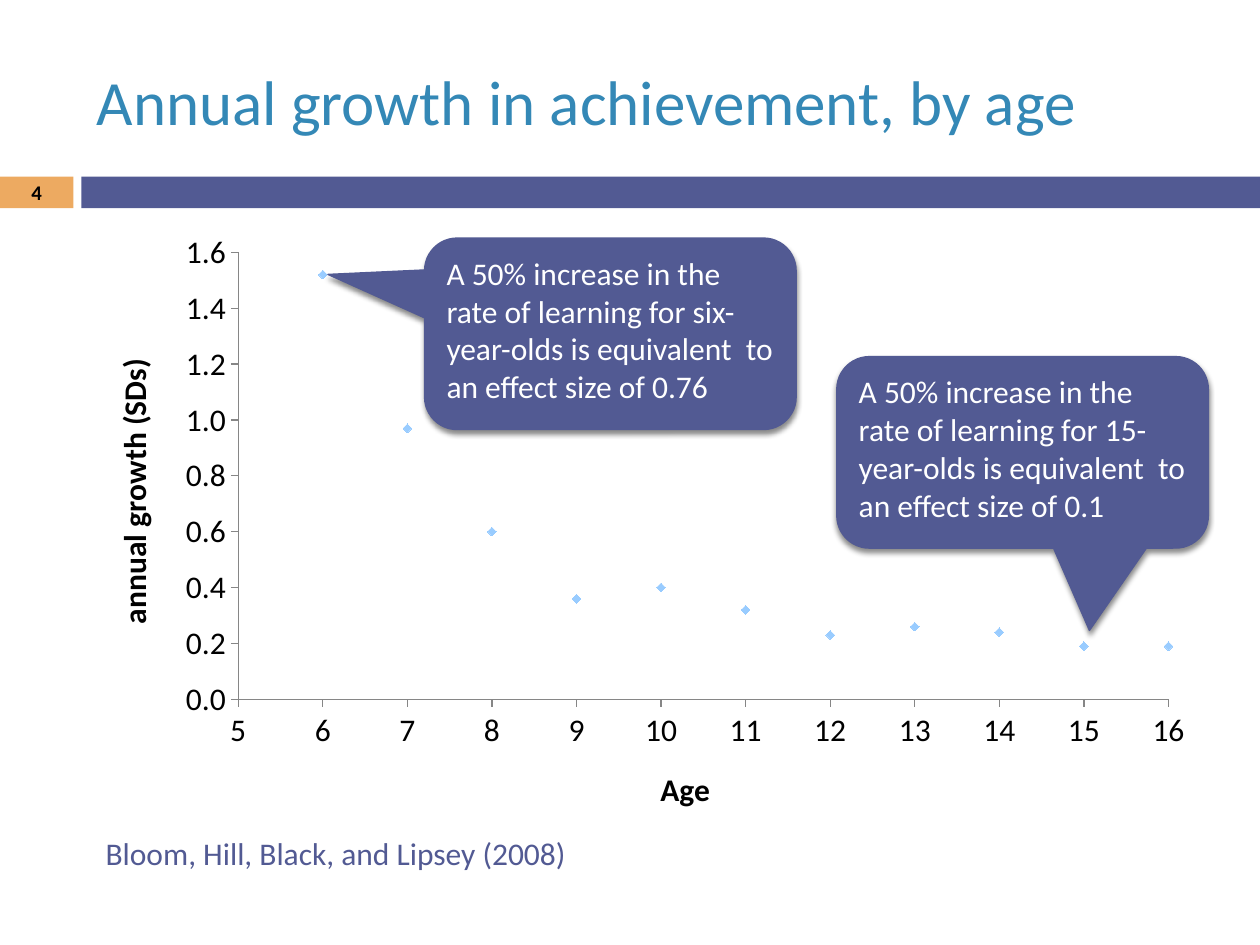
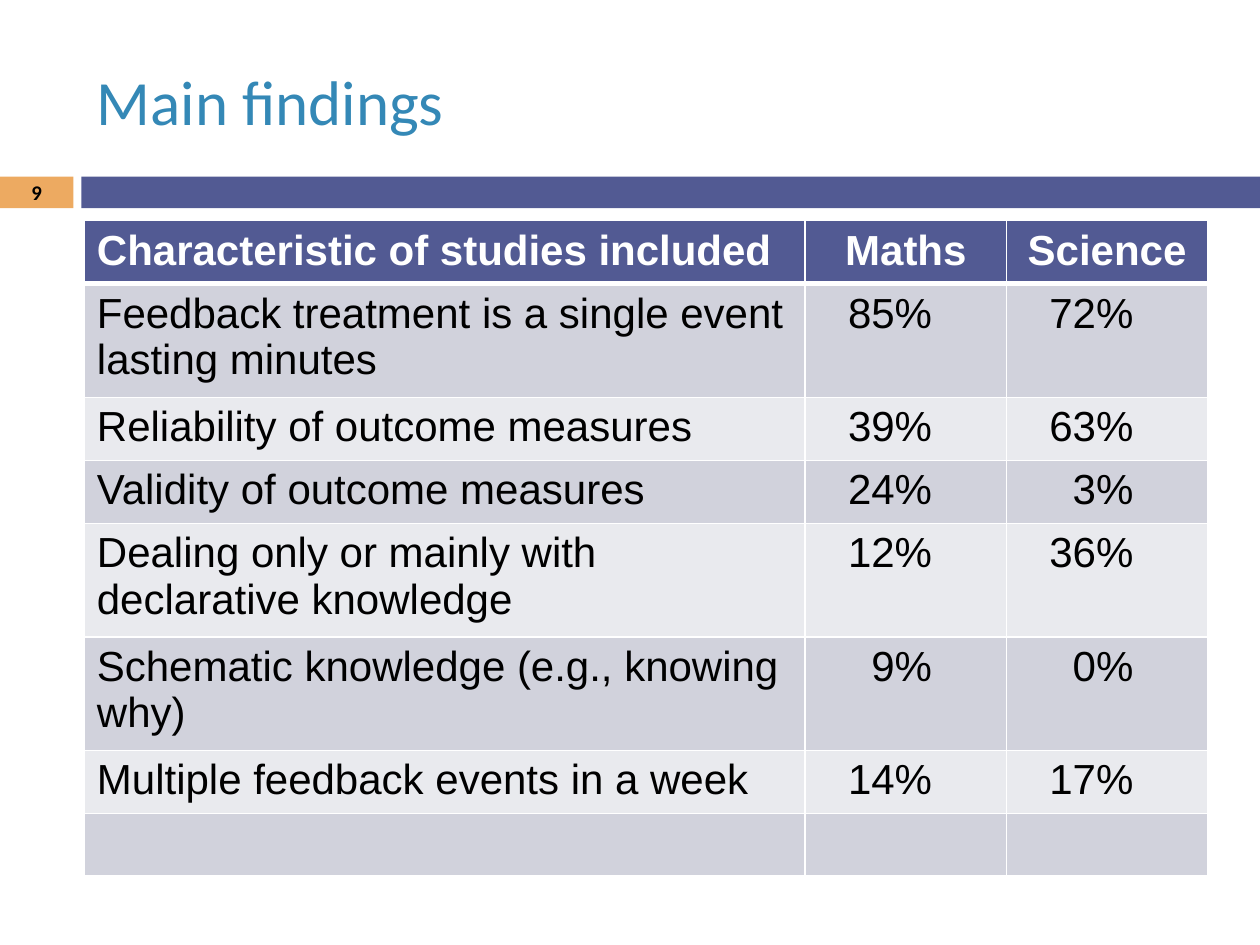
import pptx
import pptx.chart.data
import pptx.dml.color
import pptx.enum.chart
import pptx.enum.shapes
import pptx.enum.text
import pptx.oxml
import pptx.oxml.ns
import pptx.util
from pptx.util import Cm, Pt

COLORS = {"band": "525A93", "number": "EDAA61", "title": "3488B6", "text": "000000",
          "white": "FFFFFF", "odd": "D1D2DC", "even": "E9EAEE", "marker": "99CCFF", "axis": "868686"}
RGB = {name: pptx.dml.color.RGBColor.from_string(value) for name, value in COLORS.items()}
ALIGN = pptx.enum.text.PP_ALIGN
ANCHOR = pptx.enum.text.MSO_ANCHOR
SHAPE = pptx.enum.shapes.MSO_SHAPE


def write(tf, text, color, align=ALIGN.LEFT, anchor=ANCHOR.TOP, **font):
    """Put one formatted run into a text frame."""
    tf.word_wrap = True
    tf.vertical_anchor = anchor
    p = tf.paragraphs[0]
    p.alignment = align
    r = p.add_run()
    r.text = text
    for key, value in ({"name": "Calibri", "size": Pt(18), "bold": False} | font).items():
        setattr(r.font, key, value)
    r.font.color.rgb = RGB[color]


def add_filled(s, kind, box, color):
    sp = s.shapes.add_shape(kind, *map(Cm, box))
    sp.shadow.inherit = False
    sp.fill.solid()
    sp.fill.fore_color.rgb = RGB[color]
    sp.line.fill.background()
    return sp


prs = pptx.Presentation()
prs.slide_width, prs.slide_height = Cm(25.4), Cm(19.05)

# Title, band and slide number on every slide
slides = []
for title, number in [("Annual growth in achievement, by age", "4"), ("Main findings", "9")]:
    s = prs.slides.add_slide(prs.slide_layouts[6])
    add_filled(s, SHAPE.RECTANGLE, (0, 3.56, 1.48, 0.64), "number")
    add_filled(s, SHAPE.RECTANGLE, (1.64, 3.56, 23.76, 0.64), "band")
    sp = s.shapes.add_textbox(Cm(1.7), Cm(0.64), Cm(22.65), Cm(2.75))
    write(sp.text_frame, title, "title", anchor=ANCHOR.MIDDLE, size=Pt(36))
    sp = s.shapes.add_textbox(0, Cm(3.54), Cm(1.48), Cm(0.68))
    write(sp.text_frame, number, "text", ALIGN.CENTER, ANCHOR.MIDDLE, size=Pt(11.9), bold=True)
    slides.append(s)
growth_slide, findings_slide = slides

# Annual growth: source line, scatter chart and callouts
sp = growth_slide.shapes.add_textbox(Cm(1.88), Cm(16.69), Cm(17.35), Cm(1.02))
write(sp.text_frame, "Bloom, Hill, Black, and Lipsey (2008)", "band")

growth = [1.52, 0.97, 0.6, 0.36, 0.4, 0.32, 0.23, 0.26, 0.24, 0.19, 0.19]
data = pptx.chart.data.XyChartData()
points = data.add_series("Series 1")
for age, value in enumerate(growth, start=6):
    points.add_data_point(age, value)
chart = growth_slide.shapes.add_chart(pptx.enum.chart.XL_CHART_TYPE.XY_SCATTER, Cm(1.7), Cm(4.45),
                                      Cm(22.65), Cm(12.5), data).chart
chart.has_legend = chart.has_title = False
chart.font.name, chart.font.size = "Calibri", Pt(18)
chart.font.color.rgb = RGB["text"]
plot = chart.plots[0]
plot.vary_by_categories = False
series = plot.series[0]
series.format.line.fill.background()
series.marker.style = pptx.enum.chart.XL_MARKER_STYLE.DIAMOND
series.marker.size = 5
series.marker.format.fill.solid()
series.marker.format.fill.fore_color.rgb = RGB["marker"]
series.marker.format.line.fill.background()

axes = [
    (chart.category_axis, "Age", "General",
     {"minimum_scale": 5, "maximum_scale": 16, "major_unit": 1}),
    (chart.value_axis, "annual growth (SDs)", "#,##0.0",
     {"minimum_scale": 0, "maximum_scale": 1.6, "major_unit": 0.2}),
]
for axis, title, number_format, scale in axes:
    for key, value in scale.items():
        setattr(axis, key, value)
    axis.has_major_gridlines = False
    axis.major_tick_mark = pptx.enum.chart.XL_TICK_MARK.OUTSIDE
    axis.minor_tick_mark = pptx.enum.chart.XL_TICK_MARK.NONE
    axis.tick_labels.number_format = number_format
    axis.tick_labels.number_format_is_linked = False
    axis.format.line.color.rgb = RGB["axis"]
    write(axis.axis_title.text_frame, title, "text", ALIGN.CENTER, bold=True)

plot_area = chart._chartSpace.chart.plotArea
for layout in plot_area.findall(pptx.oxml.ns.qn("c:layout")):
    plot_area.remove(layout)
plot_area.insert(0, pptx.oxml.parse_xml(
    f'<c:layout {pptx.oxml.ns.nsdecls("c")}><c:manualLayout><c:layoutTarget val="inner"/>'
    '<c:xMode val="edge"/><c:yMode val="edge"/><c:x val="0.137"/><c:y val="0.051"/>'
    '<c:w val="0.828"/><c:h val="0.721"/></c:manualLayout></c:layout>'))

callouts = [
    (8.56, 4.8, (-0.76, -0.31, 0.17), "six", "0.76"),
    (16.87, 7.19, (0.18, 0.93, 0.17), "15", "0.1"),
]
for left, top, adjustments, age, effect in callouts:
    sp = add_filled(growth_slide, SHAPE.ROUNDED_RECTANGULAR_CALLOUT, (left, top, 7.49, 3.86), "band")
    for i, value in enumerate(adjustments):
        sp.adjustments[i] = value
    sp.line.color.rgb = RGB["band"]
    sp.line.width = Pt(0.79)
    sp._element.spPr.find(pptx.oxml.ns.qn("a:effectLst")).append(pptx.oxml.parse_xml(
        f'<a:outerShdw {pptx.oxml.ns.nsdecls("a")} blurRad="{Pt(3)}" dist="{Pt(2.4)}" dir="5400000" '
        f'rotWithShape="0"><a:srgbClr val="{COLORS["text"]}"><a:alpha val="45000"/></a:srgbClr></a:outerShdw>'))
    write(sp.text_frame, f"A 50% increase in the rate of learning for {age}-year-olds is equivalent"
          f"  to an effect size of {effect}", "white")

# Main findings: table with an empty last row
rows = [
    ("Characteristic of studies included", "Maths", "Science"),
    ("Feedback treatment is a single event lasting minutes", "85%", "72%"),
    ("Reliability of outcome measures", "39%", "63%"),
    ("Validity of outcome measures", "24%", "3%"),
    ("Dealing only or mainly with declarative knowledge", "12%", "36%"),
    ("Schematic knowledge (e.g., knowing why)", "9%", "0%"),
    ("Multiple feedback events in a week", "14%", "17%"),
    ("", "", ""),
]
table = findings_slide.shapes.add_table(len(rows), 3, Cm(1.7), Cm(4.45), Cm(22.65), Cm(8.23)).table
for column, width in zip(table.columns, (14.53, 4.06, 4.06)):
    column.width = Cm(width)
for i, texts in enumerate(rows):
    header = i == 0
    table.rows[i].height = Cm(1.25 if i == len(rows) - 1 else 1.04)
    for j, text in enumerate(texts):
        cell = table.cell(i, j)
        widths = {"L": 1, "R": 1, "T": 3 if i == 1 else 1, "B": 3 if header else 1}
        for side, width in widths.items():
            cell._tc.get_or_add_tcPr().append(pptx.oxml.parse_xml(
                f'<a:ln{side} {pptx.oxml.ns.nsdecls("a")} w="{Pt(width)}"><a:solidFill>'
                f'<a:srgbClr val="{COLORS["white"]}"/></a:solidFill></a:ln{side}>'))
        cell.fill.solid()
        cell.fill.fore_color.rgb = RGB["band" if header else "odd" if i % 2 else "even"]
        if not text:
            continue
        align = ALIGN.LEFT if j == 0 else ALIGN.CENTER if header else ALIGN.RIGHT
        if align == ALIGN.RIGHT:
            cell.margin_right = Cm(1.5)
        write(cell.text_frame, text, "white" if header else "text", align,
              name="Arial", size=Pt(24), bold=header)

prs.save("out.pptx")
